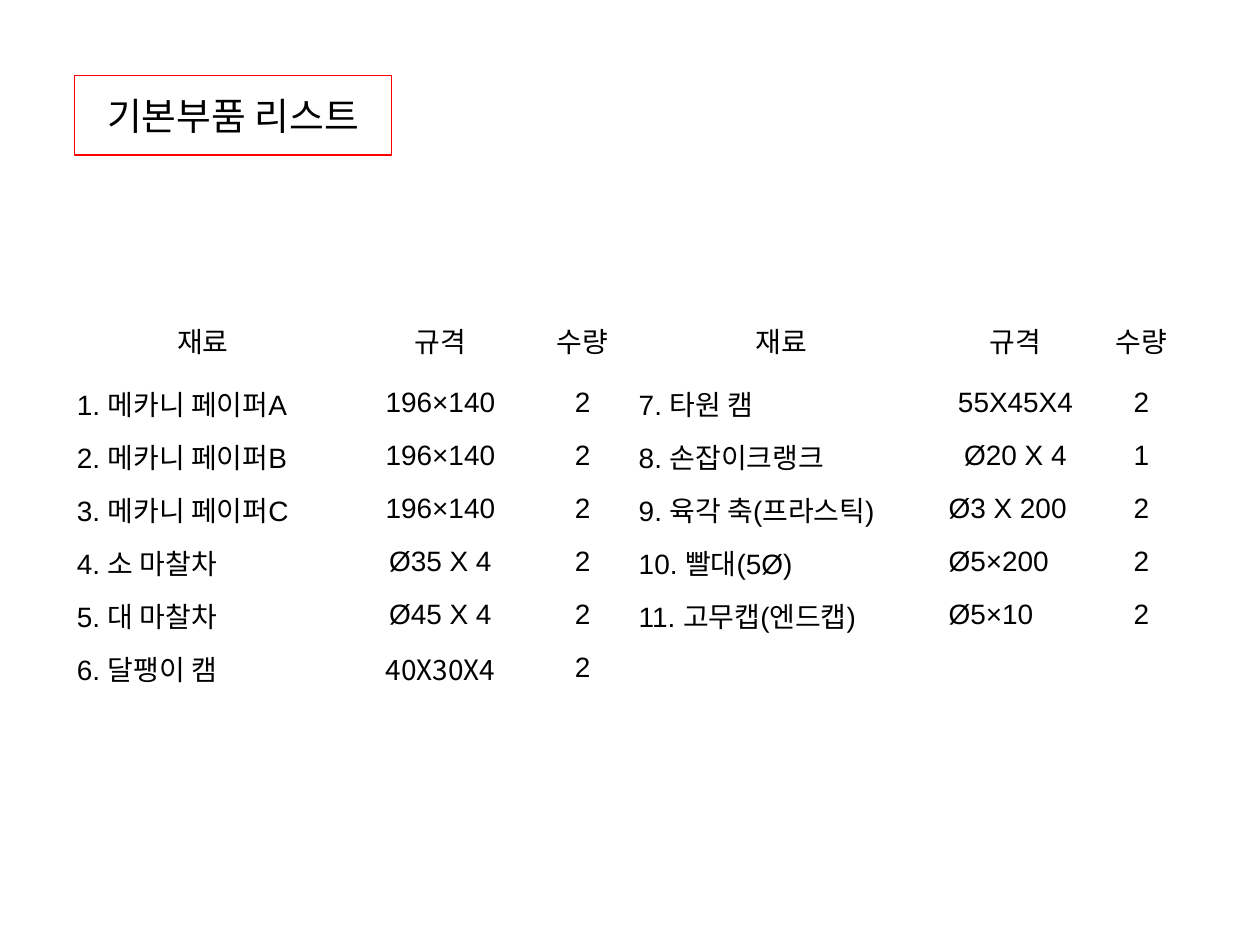
import pptx
import pptx.util
import pptx.dml.color
import pptx.enum.shapes
import pptx.enum.text
import pptx.oxml
import pptx.oxml.ns
from pptx.util import Inches

BLACK = pptx.dml.color.RGBColor(0x00, 0x00, 0x00)
RED = pptx.dml.color.RGBColor(0xFF, 0x00, 0x00)
LATIN_FONT = "Arial"
KOREAN_FONT = "Noto Sans CJK KR"
LEFT = pptx.enum.text.PP_ALIGN.LEFT
CENTER = pptx.enum.text.PP_ALIGN.CENTER
MIDDLE = pptx.enum.text.MSO_ANCHOR.MIDDLE

COLUMN_WIDTHS = [2.2, 1.57, 0.69, 2.46, 1.26, 0.74]
HEADER_HEIGHT = 0.58
ROW_HEIGHT = 0.42
NAME_COLUMNS = (0, 3)
HEADERS = ["재료", "규격", "수량"] * 2
PARTS = [
    ["1. 메카니 페이퍼A", "196×140", "2", "7. 타원 캠", "55X45X4", "2"],
    ["2. 메카니 페이퍼B", "196×140", "2", "8. 손잡이크랭크", "Ø20 X 4", "1"],
    ["3. 메카니 페이퍼C", "196×140", "2", "9. 육각 축(프라스틱)", "Ø3 X 200", "2"],
    ["4. 소 마찰차", "Ø35 X 4", "2", "10. 빨대(5Ø)", "Ø5×200", "2"],
    ["5. 대 마찰차", "Ø45 X 4", "2", "11. 고무캡(엔드캡)", "Ø5×10", "2"],
    ["6. 달팽이 캠", "40X30X4", "2", "", "", ""],
]
LEFT_SPECS = ("Ø3 X 200", "Ø5×200", "Ø5×10")
KOREAN_FONT_SPEC = "40X30X4"


def write_text(frame, text, size=16, font=LATIN_FONT, align=CENTER):
    para = frame.paragraphs[0]
    para.alignment = align
    span = para.add_run()
    span.text = text
    span.font.size = pptx.util.Pt(size)
    span.font.name = font
    span.font.color.rgb = BLACK
    # Hangul takes the East Asian typeface
    east_asian = pptx.oxml.parse_xml(
        f'<a:ea {pptx.oxml.ns.nsdecls("a")} typeface="{KOREAN_FONT}"/>')
    span.font._element.append(east_asian)


def add_title(page, text):
    box = page.shapes.add_shape(
        pptx.enum.shapes.MSO_SHAPE.RECTANGLE,
        Inches(0.59), Inches(0.6), Inches(2.52), Inches(0.63))
    box.shadow.inherit = False
    box.fill.background()
    box.line.color.rgb = RED
    box.line.width = pptx.util.Pt(0.75)
    box.text_frame.word_wrap = True
    box.text_frame.vertical_anchor = MIDDLE
    write_text(box.text_frame, text, size=21.6, font=KOREAN_FONT)


def hide_borders(cell):
    properties = cell._tc.get_or_add_tcPr()
    for position, side in enumerate(("lnL", "lnR", "lnT", "lnB")):
        border = pptx.oxml.parse_xml(
            f'<a:{side} {pptx.oxml.ns.nsdecls("a")} w="0"><a:noFill/></a:{side}>')
        properties.insert(position, border)


def add_parts_table(page):
    rows = [HEADERS] + PARTS
    heights = [HEADER_HEIGHT] + [ROW_HEIGHT] * len(PARTS)
    table = page.shapes.add_table(
        len(rows), len(COLUMN_WIDTHS), Inches(0.51), Inches(2.41),
        Inches(sum(COLUMN_WIDTHS)), Inches(sum(heights))).table
    table.first_row = False
    table.horz_banding = False
    for column, width in zip(table.columns, COLUMN_WIDTHS):
        column.width = Inches(width)
    for row, height in zip(table.rows, heights):
        row.height = Inches(height)

    for row_index, values in enumerate(rows):
        for column_index, text in enumerate(values):
            cell = table.cell(row_index, column_index)
            cell.fill.background()
            hide_borders(cell)
            cell.vertical_anchor = MIDDLE
            if not text:
                continue
            is_name = row_index > 0 and column_index in NAME_COLUMNS
            write_text(
                cell.text_frame, text,
                font=KOREAN_FONT if text == KOREAN_FONT_SPEC else LATIN_FONT,
                align=LEFT if is_name or text in LEFT_SPECS else CENTER)


def main():
    deck = pptx.Presentation()
    deck.slide_width = Inches(10)
    deck.slide_height = Inches(7.5)
    page = deck.slides.add_slide(deck.slide_layouts[6])
    # Framed heading
    add_title(page, "기본부품 리스트")
    # Parts, sizes and quantities
    add_parts_table(page)
    deck.save("out.pptx")


if __name__ == "__main__":
    main()
